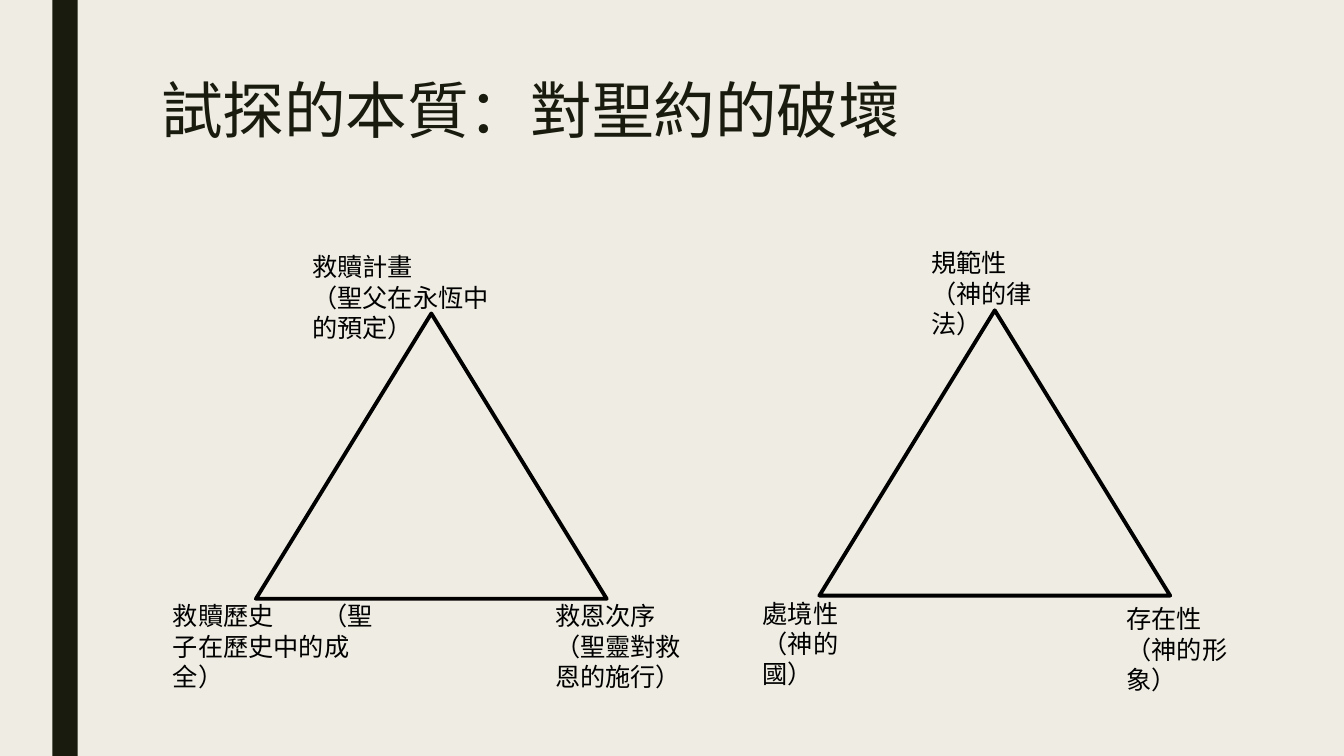
from dataclasses import dataclass

from lxml.etree import SubElement
from pptx import Presentation
from pptx.dml.color import RGBColor
from pptx.enum.shapes import MSO_SHAPE
from pptx.enum.text import MSO_ANCHOR, MSO_AUTO_SIZE
from pptx.oxml.ns import qn
from pptx.shapes.autoshape import Shape
from pptx.slide import Slide
from pptx.util import Cm, Pt

FONT = "Lato"
CREAM = "EFEDE3"
DARK = "191B0E"
BLACK = "000000"
TRIANGLE_WIDTH = 8.84
TRIANGLE_HEIGHT = 7.19


@dataclass(frozen=True)
class Label:
    left: float
    top: float
    width: float
    height: float
    lines: tuple[str, ...]
    size: float = 18
    color: str = BLACK
    line_spacing: float = 1.0
    tab_stop: float | None = None


@dataclass(frozen=True)
class Triangle:
    left: float
    top: float
    labels: tuple[Label, ...]


TITLE = Label(3.81, 1.91, 28.65, 2.26, ("試探的本質：對聖約的破壞",), 44, DARK, 0.89)

TRIANGLES = (
    Triangle(6.45, 7.9, (
        Label(7.62, 6.22, 5.31, 2.57, ("救贖計畫", "（聖父在永恆中的預定）")),
        Label(13.74, 15.01, 3.94, 2.57, ("救恩次序（聖靈對救恩的施行）",)),
        Label(4.11, 15.01, 5.59, 2.57, ("救贖歷史\t（聖子在歷史中的成全）",), tab_stop=3.76),
    )),
    Triangle(20.65, 7.82, (
        Label(28.14, 15.09, 4.04, 1.8, ("存在性", "（神的形象）")),
        Label(18.97, 14.94, 3.58, 1.8, ("處境性（神的國）",)),
        Label(23.22, 6.12, 3.94, 1.8, ("規範性", "（神的律法）")),
    )),
)


def rgb(color: str) -> RGBColor:
    return RGBColor.from_string(color)


def add_filled_shape(slide: Slide, kind: MSO_SHAPE, left: float, top: float,
                     width: float, height: float, fill: str) -> Shape:
    shape = slide.shapes.add_shape(kind, Cm(left), Cm(top), Cm(width), Cm(height))
    shape.shadow.inherit = False
    shape.fill.solid()
    shape.fill.fore_color.rgb = rgb(fill)
    shape.line.fill.background()
    return shape


def add_label(slide: Slide, label: Label) -> None:
    text_box = slide.shapes.add_textbox(
        Cm(label.left), Cm(label.top), Cm(label.width), Cm(label.height))
    frame = text_box.text_frame
    frame.word_wrap = True
    frame.auto_size = MSO_AUTO_SIZE.NONE
    frame.vertical_anchor = MSO_ANCHOR.TOP
    frame.text = "\n".join(label.lines)
    for paragraph in frame.paragraphs:
        paragraph.line_spacing = label.line_spacing
        if label.tab_stop is not None:
            properties = paragraph._p.get_or_add_pPr()
            tab_list = SubElement(properties, qn("a:tabLst"))
            SubElement(tab_list, qn("a:tab"), pos=str(Cm(label.tab_stop)), algn="l")
        paragraph.font.name = FONT
        paragraph.font.size = Pt(label.size)
        paragraph.font.color.rgb = rgb(label.color)


def add_triangle(slide: Slide, triangle: Triangle) -> None:
    shape = add_filled_shape(slide, MSO_SHAPE.ISOSCELES_TRIANGLE, triangle.left,
                             triangle.top, TRIANGLE_WIDTH, TRIANGLE_HEIGHT, CREAM)
    shape.line.color.rgb = rgb(BLACK)
    shape.line.width = Pt(2.75)
    for label in triangle.labels:
        add_label(slide, label)


def main() -> None:
    presentation = Presentation()
    presentation.slide_width = Cm(33.87)
    presentation.slide_height = Cm(19.05)
    slide = presentation.slides.add_slide(presentation.slide_layouts[6])
    slide.background.fill.solid()
    slide.background.fill.fore_color.rgb = rgb(CREAM)
    add_filled_shape(slide, MSO_SHAPE.RECTANGLE, 1.32, 0, 0.64, 19.05, DARK)
    add_label(slide, TITLE)
    for triangle in TRIANGLES:
        add_triangle(slide, triangle)
    presentation.save("out.pptx")


if __name__ == "__main__":
    main()
